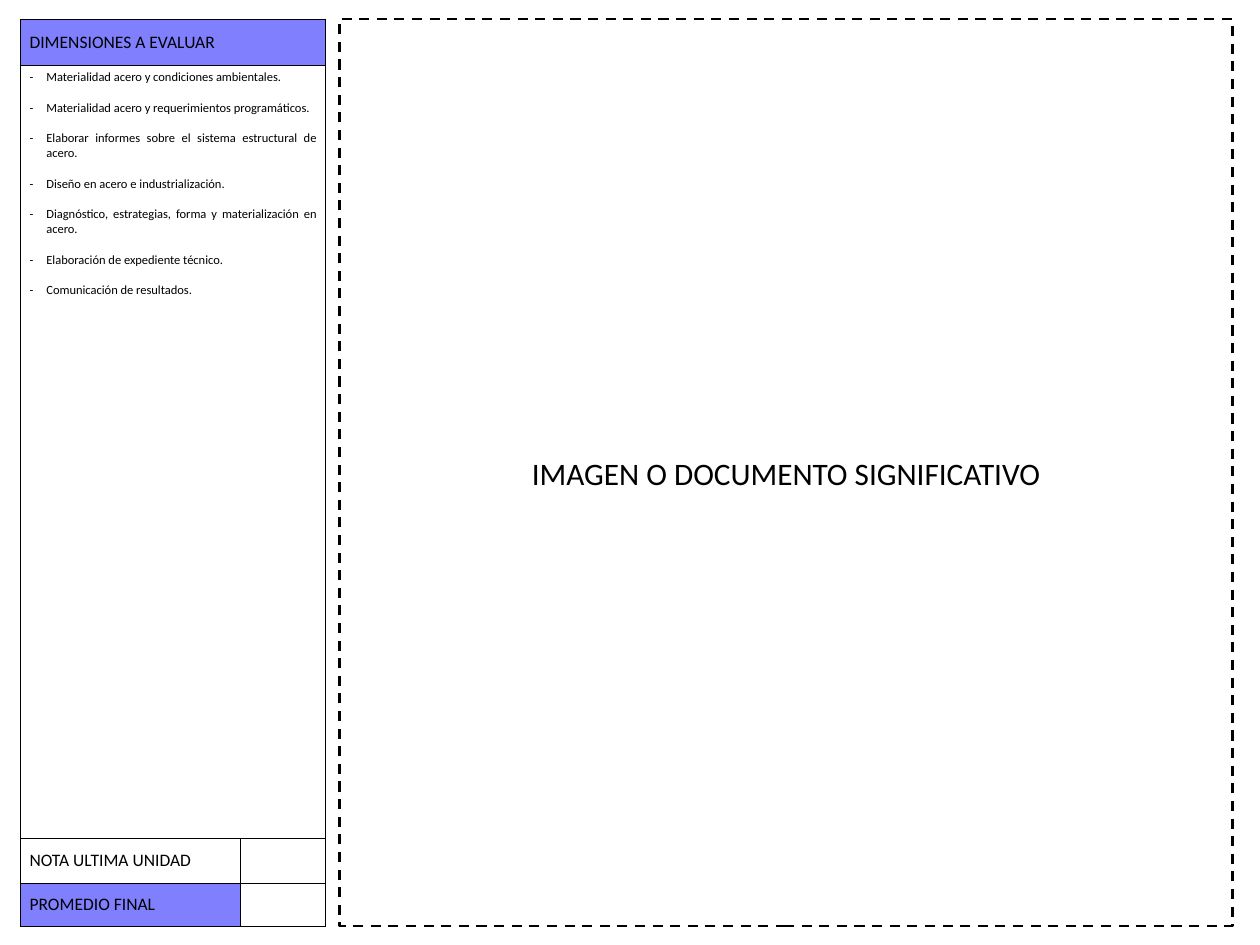
import pptx
import pptx.util
import pptx.dml.color
import pptx.enum.dml
import pptx.enum.shapes
import pptx.enum.text
import pptx.oxml
import pptx.oxml.ns
import lxml.etree

Pt = pptx.util.Pt
RGB = pptx.dml.color.RGBColor
MIDDLE = pptx.enum.text.MSO_ANCHOR.MIDDLE
ALIGN = pptx.enum.text.PP_ALIGN

theme = {
    "font": "Calibri",
    "ink": RGB(0x00, 0x00, 0x00),
    "accent": RGB(0x80, 0x80, 0xFF),
    "paper": RGB(0xFF, 0xFF, 0xFF),
    "frame_size": Pt(25),
    "label_size": Pt(14),
    "item_size": Pt(10),
}


def add_text(paragraph, text, size):
    run = paragraph.add_run()
    run.text = text
    run.font.name = theme["font"]
    run.font.size = size
    run.font.color.rgb = theme["ink"]


def set_borders(cell, widths):
    """Draw left, right, top and bottom lines, ahead of the cell's fill."""
    properties = cell._tc.get_or_add_tcPr()
    for place, (side, width) in enumerate(zip("LRTB", widths)):
        line = lxml.etree.Element(pptx.oxml.ns.qn("a:ln" + side), w=str(Pt(width)))
        fill = lxml.etree.SubElement(line, pptx.oxml.ns.qn("a:solidFill"))
        lxml.etree.SubElement(fill, pptx.oxml.ns.qn("a:srgbClr"), val=str(theme["ink"]))
        properties.insert(place, line)


presentation = pptx.Presentation()
presentation.slide_width = Pt(1008)
presentation.slide_height = Pt(756)
slide = presentation.slides.add_slide(presentation.slide_layouts[6])

top, height = 15.1, 725.8

# Dashed frame for the main document
document_frame = slide.shapes.add_shape(
    pptx.enum.shapes.MSO_SHAPE.RECTANGLE, Pt(271.5), Pt(top), Pt(714.5), Pt(height))
document_frame.shadow.inherit = False
document_frame.fill.background()
document_frame.line.color.rgb = theme["ink"]
document_frame.line.width = Pt(2)
document_frame.line.dash_style = pptx.enum.dml.MSO_LINE.DASH
document_frame.text_frame.vertical_anchor = MIDDLE
document_label = document_frame.text_frame.paragraphs[0]
document_label.alignment = ALIGN.CENTER
add_text(document_label, "IMAGEN O DOCUMENTO SIGNIFICATIVO", theme["frame_size"])

# Evaluation table
column_widths = [176, 68]
row_heights = [37.4, 618.5, 35.3, 34.6]
evaluation = slide.shapes.add_table(
    4, 2, Pt(16.4), Pt(top), Pt(sum(column_widths)), Pt(height)).table
evaluation.first_row = False
evaluation.horz_banding = False
for column, width in zip(evaluation.columns, column_widths):
    column.width = Pt(width)
for row, row_height in zip(evaluation.rows, row_heights):
    row.height = Pt(row_height)

# Fills and borders: left, right, top, bottom
accented = [(0, 0), (0, 1), (3, 0)]
horizontal_lines = [0.5, 1, 1, 0.5, 1]
for r in range(4):
    for c in range(2):
        cell = evaluation.cell(r, c)
        cell.fill.solid()
        cell.fill.fore_color.rgb = theme["accent" if (r, c) in accented else "paper"]
        set_borders(cell, [(1, 0.5)[c], (0.5, 1)[c],
                           horizontal_lines[r], horizontal_lines[r + 1]])
for r in (0, 1):
    evaluation.cell(r, 0).merge(evaluation.cell(r, 1))
    set_borders_cell = evaluation.cell(r, 0)._tc.tcPr
    set_borders_cell.find(pptx.oxml.ns.qn("a:lnR")).set("w", str(Pt(1)))

# Row labels
labels = {0: "DIMENSIONES A EVALUAR", 2: "NOTA ULTIMA UNIDAD", 3: "PROMEDIO FINAL"}
for r, label in labels.items():
    label_cell = evaluation.cell(r, 0)
    label_cell.vertical_anchor = MIDDLE
    add_text(label_cell.text_frame.paragraphs[0], label, theme["label_size"])

# Dimensions to evaluate
dimensions = [
    "Materialidad acero y condiciones ambientales.",
    "Materialidad acero y requerimientos programáticos.",
    "Elaborar informes sobre el sistema estructural de acero.",
    "Diseño en acero e industrialización.",
    "Diagnóstico, estrategias, forma y materialización en acero.",
    "Elaboración de expediente técnico.",
    "Comunicación de resultados.",
]
dimension_list = evaluation.cell(1, 0).text_frame
for i, dimension in enumerate(dimensions):
    item = dimension_list.add_paragraph() if i else dimension_list.paragraphs[0]
    item.alignment = ALIGN.JUSTIFY
    item.space_after = Pt(12.2)
    item_properties = item._p.get_or_add_pPr()
    item_properties.set("marL", str(Pt(13.5)))
    item_properties.set("indent", str(-Pt(13.5)))
    lxml.etree.SubElement(item_properties, pptx.oxml.ns.qn("a:buFont"), typeface=theme["font"])
    lxml.etree.SubElement(item_properties, pptx.oxml.ns.qn("a:buChar"), char="-")
    add_text(item, dimension, theme["item_size"])

presentation.save("out.pptx")
